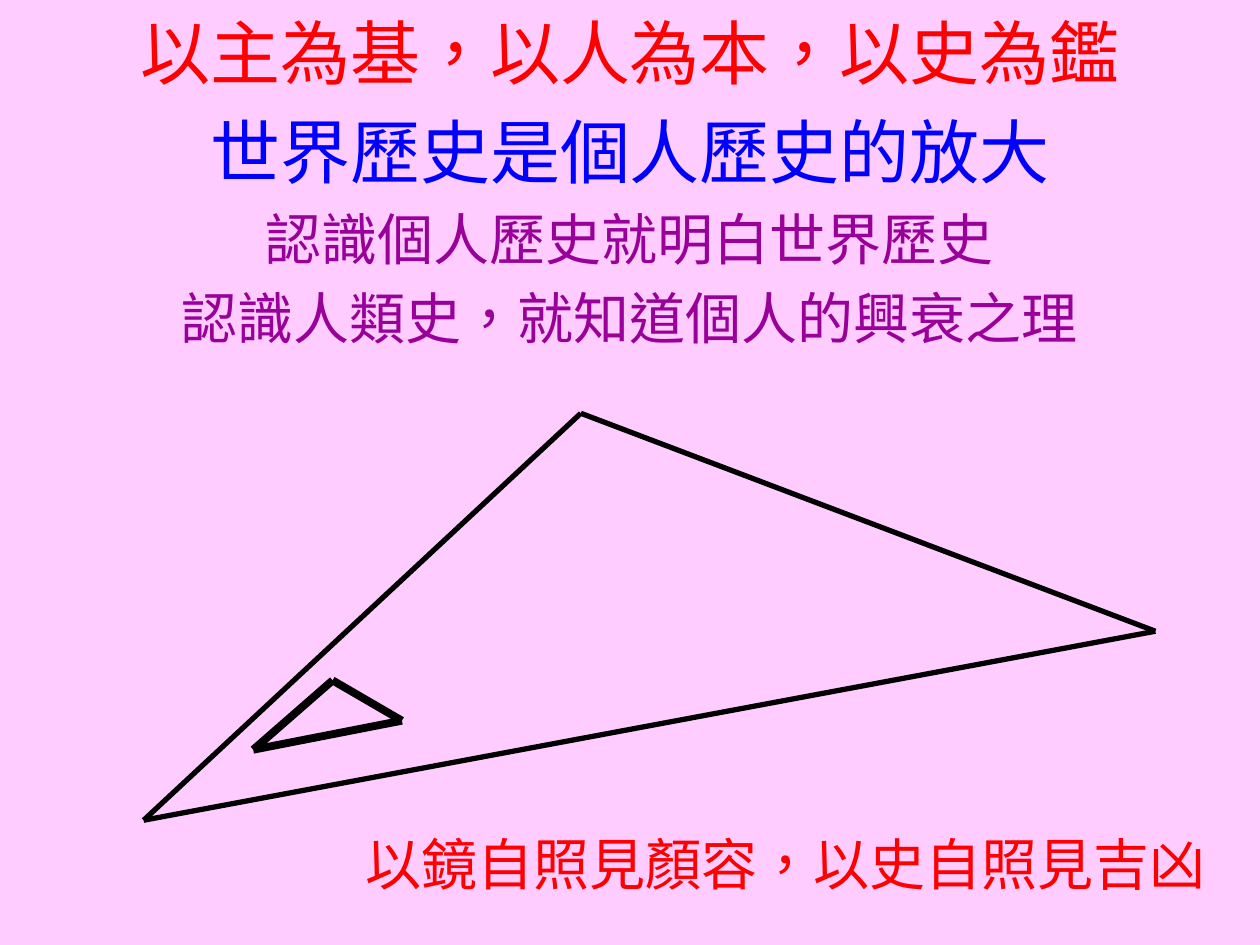
"""Build a slide with four centred statements, two nested triangles and a closing line."""
import itertools

import pptx
import pptx.dml.color
import pptx.enum.lang
import pptx.enum.shapes
import pptx.enum.text
import pptx.oxml.ns
import pptx.util
from lxml import etree

COLORS = {"bg": "FFCCFF", "red": "FF0000", "blue": "0000FF", "purple": "990099", "line": "000000"}
FONT = "Noto Sans CJK SC"
LINE_HEIGHT, GAP = 1.25, 0.16

STATEMENTS = [
    ("以主為基，以人為本，以史為鑑", 40, "red"),
    ("世界歷史是個人歷史的放大", 40, "blue"),
    ("認識個人歷史就明白世界歷史", 32, "purple"),
    ("認識人類史，就知道個人的興衰之理", 32, "purple"),
]
CLOSING = [("以鏡自照見顏容，以史自照見吉凶", 32, "red")]
TRIANGLES = [
    ([(4.61, 3.28), (1.14, 6.51), (9.17, 5.01)], 3),
    ([(2.64, 5.4), (2.01, 5.95), (3.19, 5.72)], 4.5),
]


def rgb(name):
    return pptx.dml.color.RGBColor.from_string(COLORS[name])


def place(shape, *box):
    shape.left, shape.top, shape.width, shape.height = map(pptx.util.Inches, box)


def write(tf, lines, align):
    tf.word_wrap = True
    tf.vertical_anchor = pptx.enum.text.MSO_ANCHOR.TOP
    for i, (text, size, color) in enumerate(lines):
        p = tf.add_paragraph() if i else tf.paragraphs[0]
        p.alignment = align
        p.line_spacing = pptx.util.Pt(size * LINE_HEIGHT)
        p.space_before = pptx.util.Pt(size * GAP if i else 0)
        r = p.add_run()
        r.text = text
        r.font.name = FONT
        r.font.size = pptx.util.Pt(size)
        r.font.color.rgb = rgb(color)
        r.font.language_id = pptx.enum.lang.MSO_LANGUAGE_ID.TRADITIONAL_CHINESE
        ea = etree.SubElement(r.font._element, pptx.oxml.ns.qn("a:ea"))
        ea.set("typeface", FONT)


def draw_triangle(s, corners, width):
    for start, end in itertools.combinations(corners, 2):
        line = s.shapes.add_connector(
            pptx.enum.shapes.MSO_CONNECTOR.STRAIGHT, *map(pptx.util.Inches, start + end))
        line.line.color.rgb = rgb("line")
        line.line.width = pptx.util.Pt(width)
        etree.SubElement(line._element.spPr, pptx.oxml.ns.qn("a:effectLst"))


def main():
    prs = pptx.Presentation()
    prs.slide_width, prs.slide_height = pptx.util.Inches(10), pptx.util.Inches(7.5)
    s = prs.slides.add_slide(prs.slide_layouts[0])
    s.background.fill.solid()
    s.background.fill.fore_color.rgb = rgb("bg")

    title = s.shapes.title._element
    title.getparent().remove(title)
    subtitle = s.placeholders[1]
    place(subtitle, 0, 0, 10, 7.5)
    write(subtitle.text_frame, STATEMENTS, pptx.enum.text.PP_ALIGN.CENTER)

    for corners, width in TRIANGLES:
        draw_triangle(s, corners, width)

    closing = s.shapes.add_textbox(0, 0, 0, 0)
    place(closing, 2.8, 6.51, 6.93, 0.64)
    write(closing.text_frame, CLOSING, pptx.enum.text.PP_ALIGN.LEFT)
    prs.save("out.pptx")


if __name__ == "__main__":
    main()
